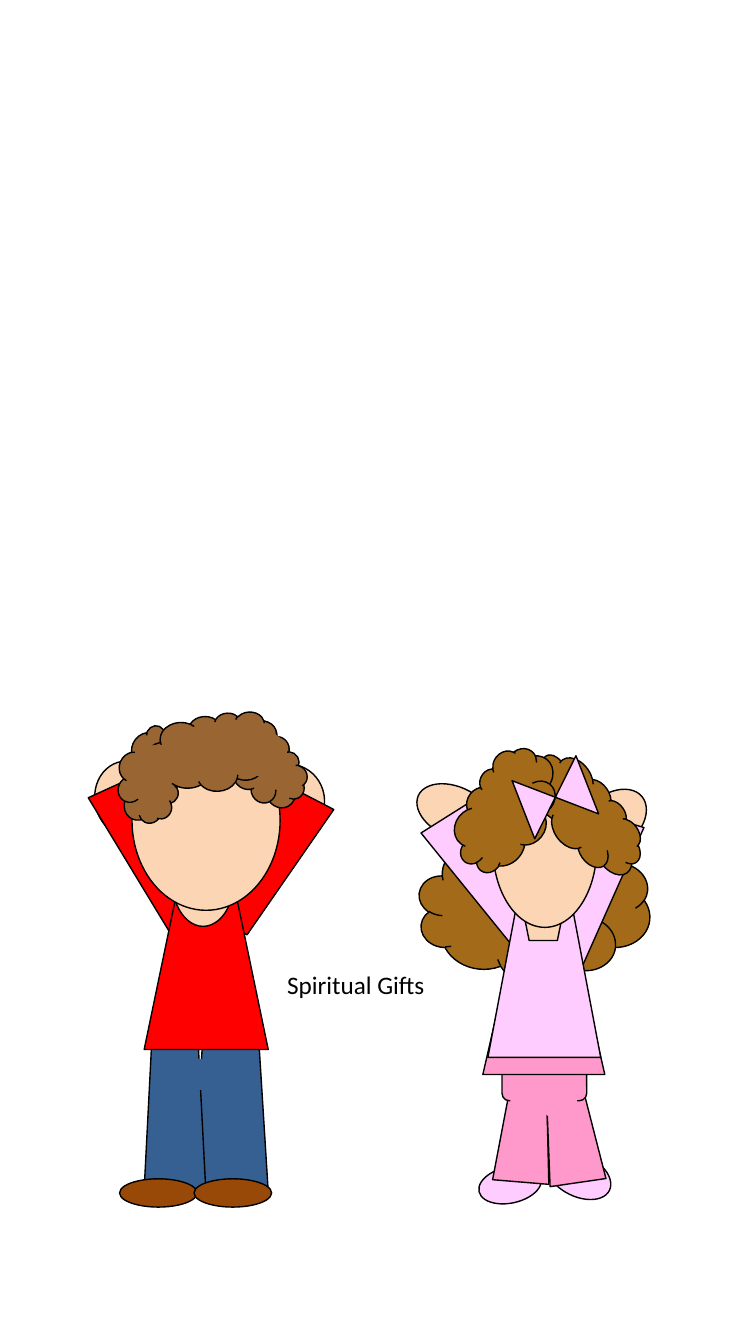
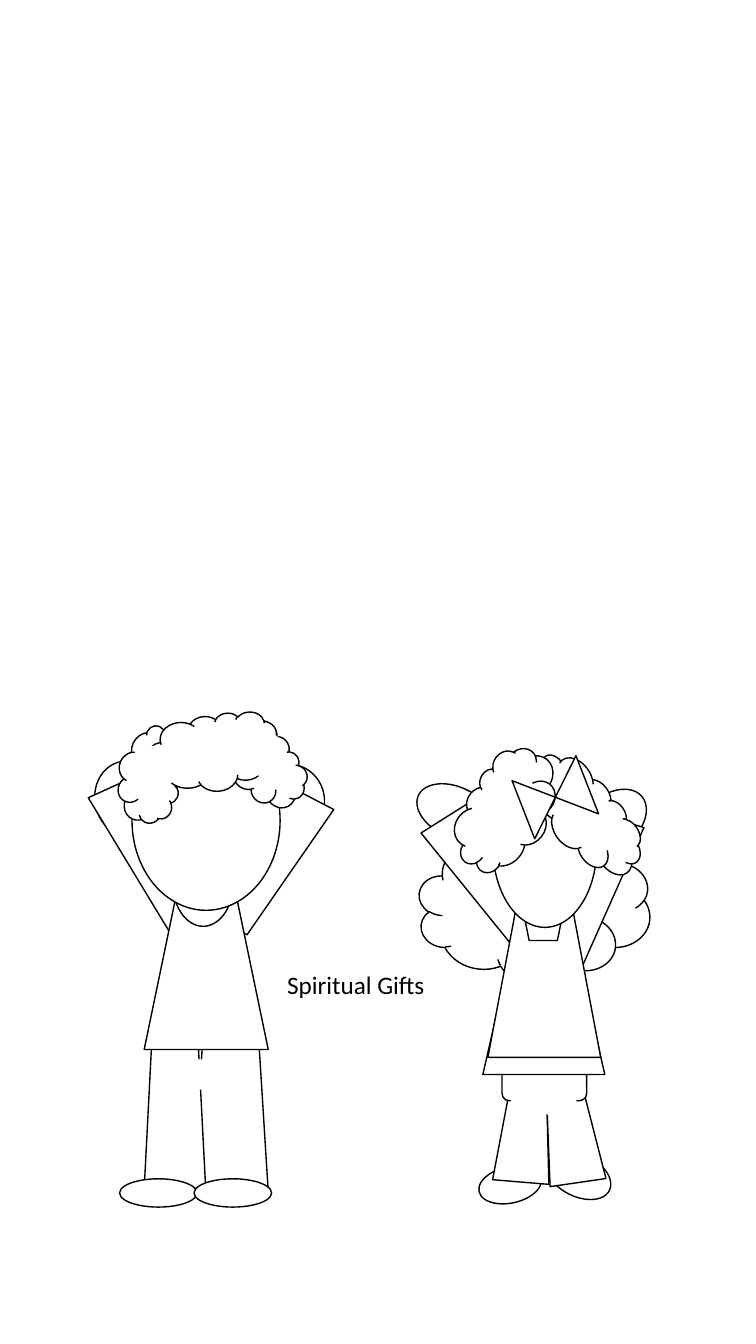
"""Build a coloured and a colouring-page slide of two children for Spiritual Gifts."""
from pptx import Presentation
from pptx.dml.color import RGBColor
from pptx.enum.shapes import MSO_SHAPE
from pptx.enum.text import MSO_ANCHOR, PP_ALIGN
from pptx.util import Pt

OVAL, TRAPEZOID, CLOUD = MSO_SHAPE.OVAL, MSO_SHAPE.TRAPEZOID, MSO_SHAPE.CLOUD
RECTANGLE, ROUNDED = MSO_SHAPE.RECTANGLE, MSO_SHAPE.ROUNDED_RECTANGLE
BOW = MSO_SHAPE.FLOWCHART_COLLATE
MIDDLE, CENTER = MSO_ANCHOR.MIDDLE, PP_ALIGN.CENTER

TITLE = "Spiritual Gifts"
TITLE_BOX = (97.9, 689, 312.5, 28.8)
FONT = "Calibri"
INK = "000000"
COLORS = {
    "skin": "FCD5B5", "jeans": "376092", "red": "FF0000", "leather": "984807",
    "curls": "996633", "hair": "A36B19", "lilac": "FFCCFF", "pink": "FF99CC",
}
BLANK = dict.fromkeys(COLORS, "FFFFFF")

OUTLINED, SEAMLESS = True, False
STRAIGHT = 0.125
FLARED = 0.25

# Each part: preset, colour, (left, top, width, height), rotation, outline
BOY = [
    (TRAPEZOID, "jeans", (138.2, 742.3, 53.3, 106.6), 0, OUTLINED, STRAIGHT),
    (TRAPEZOID, "jeans", (103, 742.3, 43.9, 106.6), 0, OUTLINED, STRAIGHT),
    (OVAL, "skin", (67.7, 543.6, 46.8, 54), 171, OUTLINED),
    (TRAPEZOID, "red", (85, 553, 55.4, 118.1), 155.5, OUTLINED, FLARED),
    (OVAL, "skin", (180, 545.8, 51.8, 54), 191.9, OUTLINED),
    (TRAPEZOID, "red", (161.3, 559.4, 55.4, 108), 207.4, OUTLINED, FLARED),
    (TRAPEZOID, "red", (103, 643, 88.6, 106.6), 0, OUTLINED, FLARED),
    (OVAL, "skin", (123.1, 597.6, 43.9, 64.1), 0, OUTLINED),
    (OVAL, "skin", (94.3, 522, 105.8, 128.2), 0, OUTLINED),
    (RECTANGLE, "jeans", (129.6, 756.7, 26.6, 21.6), 0, SEAMLESS),
    (OVAL, "leather", (103, 824.4, 20.2, 55.4), 90, OUTLINED),
    (OVAL, "leather", (156.2, 824.4, 20.2, 55.4), 90, OUTLINED),
    (CLOUD, "curls", (153.4, 522, 69.8, 47.5), 60.5, OUTLINED),
    (CLOUD, "curls", (73.4, 529.2, 69.8, 47.5), 114.2, OUTLINED),
    (CLOUD, "curls", (106.6, 509.8, 93.6, 55.4), 357, OUTLINED),
    (OVAL, "curls", (171.4, 522.7, 33.1, 31.7), 0, SEAMLESS),
    (OVAL, "curls", (93.6, 532.8, 33.1, 31.7), 0, SEAMLESS),
]
GIRL = [
    (CLOUD, "hair", (298.8, 597.6, 165.6, 104.4), 6, OUTLINED),
    (OVAL, "lilac", (398.2, 815, 30.2, 49), 116.2, OUTLINED),
    (OVAL, "lilac", (351.4, 823.7, 25.9, 45.4), 77.9, OUTLINED),
    (TRAPEZOID, "pink", (355.7, 749.5, 40.3, 95), 4.7, OUTLINED, FLARED),
    (TRAPEZOID, "pink", (385.9, 750.2, 40.3, 95), 351.7, OUTLINED, FLARED),
    (ROUNDED, "pink", (358.6, 754.6, 60.5, 31.7), 0, OUTLINED),
    (OVAL, "pink", (365, 773.3, 26.6, 25.2), 0, SEAMLESS),
    (OVAL, "pink", (385.2, 773.3, 26.6, 25.2), 0, SEAMLESS),
    (TRAPEZOID, "pink", (344.9, 672.5, 87.1, 95), 0, OUTLINED, FLARED),
    (OVAL, "skin", (417.6, 558.7, 38.2, 56.9), 230.2, OUTLINED),
    (TRAPEZOID, "lilac", (391, 581, 54.7, 107.3), 196.7, OUTLINED, FLARED),
    (OVAL, "skin", (306.7, 551.5, 36, 56.9), 114.3, OUTLINED),
    (TRAPEZOID, "lilac", (325.4, 573.1, 51.1, 107.3), 147.8, OUTLINED, FLARED),
    (TRAPEZOID, "lilac", (348.5, 648.7, 80.6, 106.6), 0, OUTLINED, FLARED),
    (TRAPEZOID, "skin", (367.9, 622.1, 40.3, 49.7), 180, OUTLINED, FLARED),
    (OVAL, "skin", (352.1, 548.6, 74.2, 113.8), 0, OUTLINED),
    (CLOUD, "hair", (367.2, 557.3, 101.5, 50.4), 54.7, OUTLINED),
    (CLOUD, "hair", (315.4, 549.4, 93.6, 60.5), 308.1, OUTLINED),
    (BOW, "lilac", (374.4, 545, 44.6, 49), 68.7, OUTLINED),
]


def draw_child(slide, parts, palette):
    child = slide.shapes.add_group_shape()
    for preset, color, box, rotation, outlined, *taper in parts:
        part = child.shapes.add_shape(preset, *map(Pt, box))
        part.shadow.inherit = False
        part.rotation = rotation
        if taper:
            part.adjustments[0] = taper[0]
        fill = palette[color]
        part.fill.solid()
        part.fill.fore_color.rgb = RGBColor.from_string(fill)
        if outlined or palette is COLORS:
            part.line.color.rgb = RGBColor.from_string(INK if outlined else fill)
            part.line.width = Pt(1)
        else:
            part.line.fill.background()


def write_title(slide):
    title = slide.shapes.title
    title.left, title.top, title.width, title.height = map(Pt, TITLE_BOX)
    frame = title.text_frame
    frame.text = TITLE
    frame.word_wrap = True
    frame.vertical_anchor = MIDDLE
    paragraph = frame.paragraphs[0]
    paragraph.alignment = CENTER
    font = paragraph.runs[0].font
    font.name, font.size = FONT, Pt(18)
    font.color.rgb = RGBColor.from_string(INK)


def main():
    deck = Presentation()
    deck.slide_width, deck.slide_height = Pt(540), Pt(960)
    for palette in (COLORS, BLANK):
        slide = deck.slides.add_slide(deck.slide_layouts[5])
        write_title(slide)
        for parts in (BOY, GIRL):
            draw_child(slide, parts, palette)
    deck.save("out.pptx")


if __name__ == "__main__":
    main()
